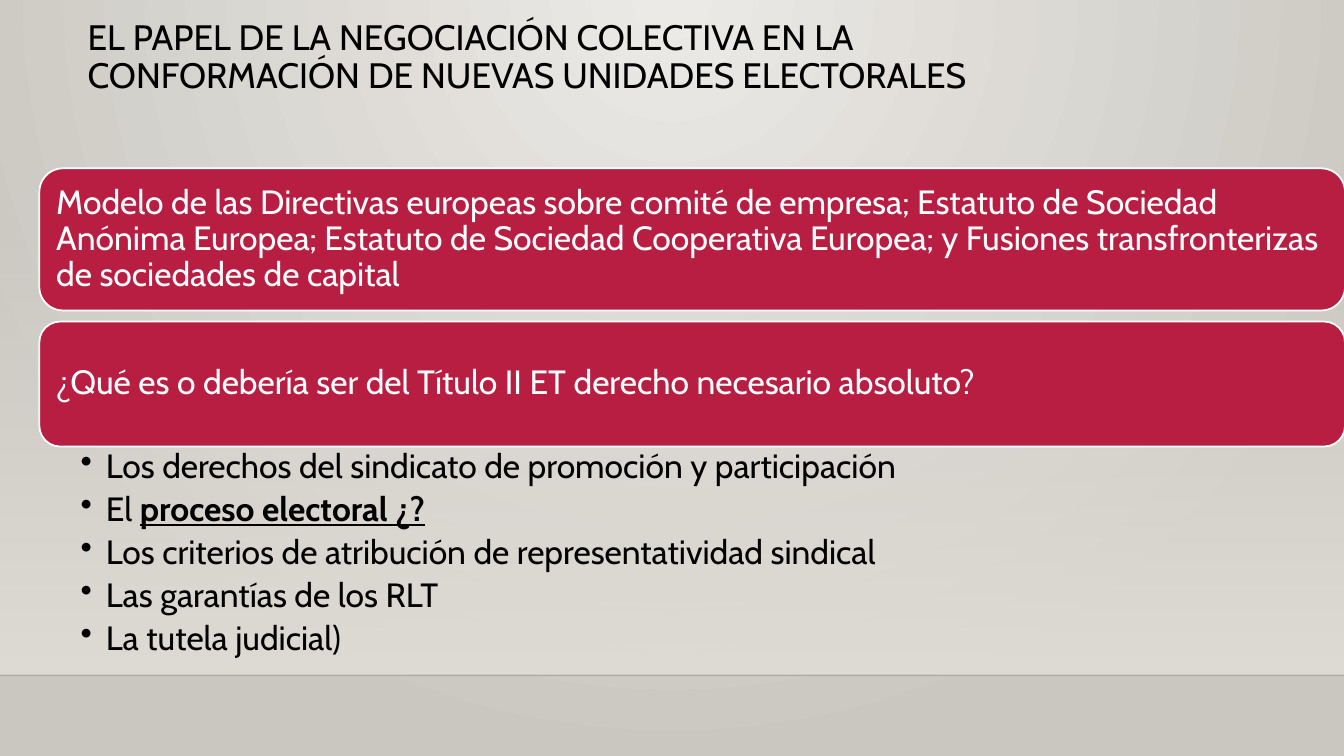
import pptx
import pptx.util
import pptx.dml.color
import pptx.enum.shapes
import pptx.enum.text
import pptx.oxml
import pptx.oxml.ns
from lxml import etree

Inches = pptx.util.Inches
Pt = pptx.util.Pt
RGBColor = pptx.dml.color.RGBColor
qn = pptx.oxml.ns.qn
ANCHOR = pptx.enum.text.MSO_ANCHOR

BLACK = RGBColor(0x00, 0x00, 0x00)
WHITE = RGBColor(0xFF, 0xFF, 0xFF)
CRIMSON = RGBColor(0xB7, 0x1E, 0x42)
FLOOR = RGBColor(0xDF, 0xDB, 0xD5)
FLOOR_EDGE = RGBColor(0x00, 0x00, 0x01)
GLOW = RGBColor(0xEC, 0xEA, 0xE7)
SHADE = RGBColor(0xCA, 0xC7, 0xC1)
FONT = "Cabin"
WIDTH, HEIGHT = 13.33, 7.5

TITLE = "EL PAPEL DE LA NEGOCIACIÓN COLECTIVA EN LA CONFORMACIÓN DE NUEVAS UNIDADES ELECTORALES"
DIRECTIVES = (
    "Modelo de las Directivas europeas sobre comité de empresa; Estatuto de Sociedad "
    "Anónima Europea; Estatuto de Sociedad Cooperativa Europea; y Fusiones "
    "transfronterizas de sociedades de capital"
)
QUESTION = "¿Qué es o debería ser del Título II ET derecho necesario absoluto?"
ANSWERS = [
    [("Los derechos del sindicato de promoción y participación", False)],
    [("El ", False), ("proceso electoral ¿?", True)],
    [("Los criterios de atribución de representatividad sindical", False)],
    [("Las garantías de los RLT", False)],
    [("La tutela judicial)", False)],
]


def write_paragraph(paragraph, runs, size=24, color=BLACK, space_after=0, bullet=False):
    paragraph.alignment = pptx.enum.text.PP_ALIGN.LEFT
    paragraph.line_spacing = 0.9
    paragraph.space_after = Pt(space_after)
    if bullet:
        paragraph.level = 1
        properties = paragraph._p.get_or_add_pPr()
        properties.set("marL", str(Inches(0.25)))
        properties.set("indent", str(Inches(-0.25)))
        etree.SubElement(properties, qn("a:buChar"), char="•")
    for text, emphasis in runs:
        run = paragraph.add_run()
        run.text = text
        run.font.name = FONT
        run.font.size = Pt(size)
        run.font.color.rgb = color
        run.font.bold = emphasis
        run.font.underline = emphasis


def format_frame(frame, anchor, left, top, right, bottom):
    frame.word_wrap = True
    frame.auto_size = pptx.enum.text.MSO_AUTO_SIZE.NONE
    frame.vertical_anchor = anchor
    frame.margin_left, frame.margin_top = Inches(left), Inches(top)
    frame.margin_right, frame.margin_bottom = Inches(right), Inches(bottom)


def set_gradient(fill, colors):
    fill.gradient()
    for stop, position, color in zip(fill.gradient_stops, (0, 1), colors):
        stop.position = position
        stop.color.rgb = color


def set_alpha(element, percent):
    color = element.find(".//" + qn("a:srgbClr"))
    etree.SubElement(color, qn("a:alpha"), val=str(percent * 1000))


def draw_backdrop(slide, left, top, width, height):
    set_gradient(slide.background.fill, (GLOW, SHADE))
    gradient = slide.element.find(".//" + qn("a:gradFill"))
    gradient.remove(gradient.find(qn("a:lin")))
    circle = etree.SubElement(gradient, qn("a:path"), {"path": "circle"})
    etree.SubElement(circle, qn("a:fillToRect"), l="43000", t="0", r="43000", b="100000")

    floor = slide.shapes.add_shape(
        pptx.enum.shapes.MSO_SHAPE.RECTANGLE,
        Inches(left), Inches(top), Inches(width), Inches(height))
    floor.shadow.inherit = False
    floor.line.fill.background()
    set_gradient(floor.fill, (FLOOR, FLOOR))
    floor.fill.gradient_angle = 270
    set_alpha(floor._element.spPr, 0)

    edge = slide.shapes.add_connector(
        pptx.enum.shapes.MSO_CONNECTOR.STRAIGHT,
        Inches(left), Inches(top + height), Inches(left + width), Inches(top + height))
    edge.line.color.rgb = FLOOR_EDGE
    edge.line.width = Pt(1)
    set_alpha(edge._element.spPr, 20)
    etree.SubElement(edge._element.spPr, qn("a:effectLst"))


def place_title(slide, left, top, width, height):
    title = slide.shapes.title
    title.left, title.top = Inches(left), Inches(top)
    title.width, title.height = Inches(width), Inches(height)
    format_frame(title.text_frame, ANCHOR.TOP, 0.1, 0.05, 0.1, 0.05)
    write_paragraph(title.text_frame.paragraphs[0], [(TITLE, False)], size=25.2)


def draw_banner(slide, text, left, top, width, height):
    banner = slide.shapes.add_shape(
        pptx.enum.shapes.MSO_SHAPE.ROUNDED_RECTANGLE,
        Inches(left), Inches(top), Inches(width), Inches(height))
    banner.shadow.inherit = False
    banner.fill.solid()
    banner.fill.fore_color.rgb = CRIMSON
    banner.line.color.rgb = WHITE
    banner.line.width = Pt(1.25)
    format_frame(banner.text_frame, ANCHOR.MIDDLE, 0.1, 0.1, 0.1, 0.1)
    write_paragraph(banner.text_frame.paragraphs[0], [(text, False)], color=WHITE)


def draw_answers(slide, left, top, width, height):
    box = slide.shapes.add_textbox(Inches(left), Inches(top), Inches(width), Inches(height))
    frame = box.text_frame
    format_frame(frame, ANCHOR.TOP, 0.41, 0.03, 0.19, 0.03)
    for index, runs in enumerate(ANSWERS):
        paragraph = frame.add_paragraph() if index else frame.paragraphs[0]
        write_paragraph(paragraph, runs, space_after=4.8, bullet=True)


def main():
    presentation = pptx.Presentation()
    presentation.slide_width = Inches(WIDTH)
    presentation.slide_height = Inches(HEIGHT)
    slide = presentation.slides.add_slide(presentation.slide_layouts[5])
    draw_backdrop(slide, 0, 2.21, WIDTH, 4.49)
    place_title(slide, 0.77, 0.15, 9.65, 0.77)
    draw_banner(slide, DIRECTIVES, 0.39, 1.67, 12.95, 1.41)
    draw_banner(slide, QUESTION, 0.39, 3.19, 12.95, 1.24)
    draw_answers(slide, 0.39, 4.43, 12.95, 2.13)
    presentation.save("out.pptx")


if __name__ == "__main__":
    main()
